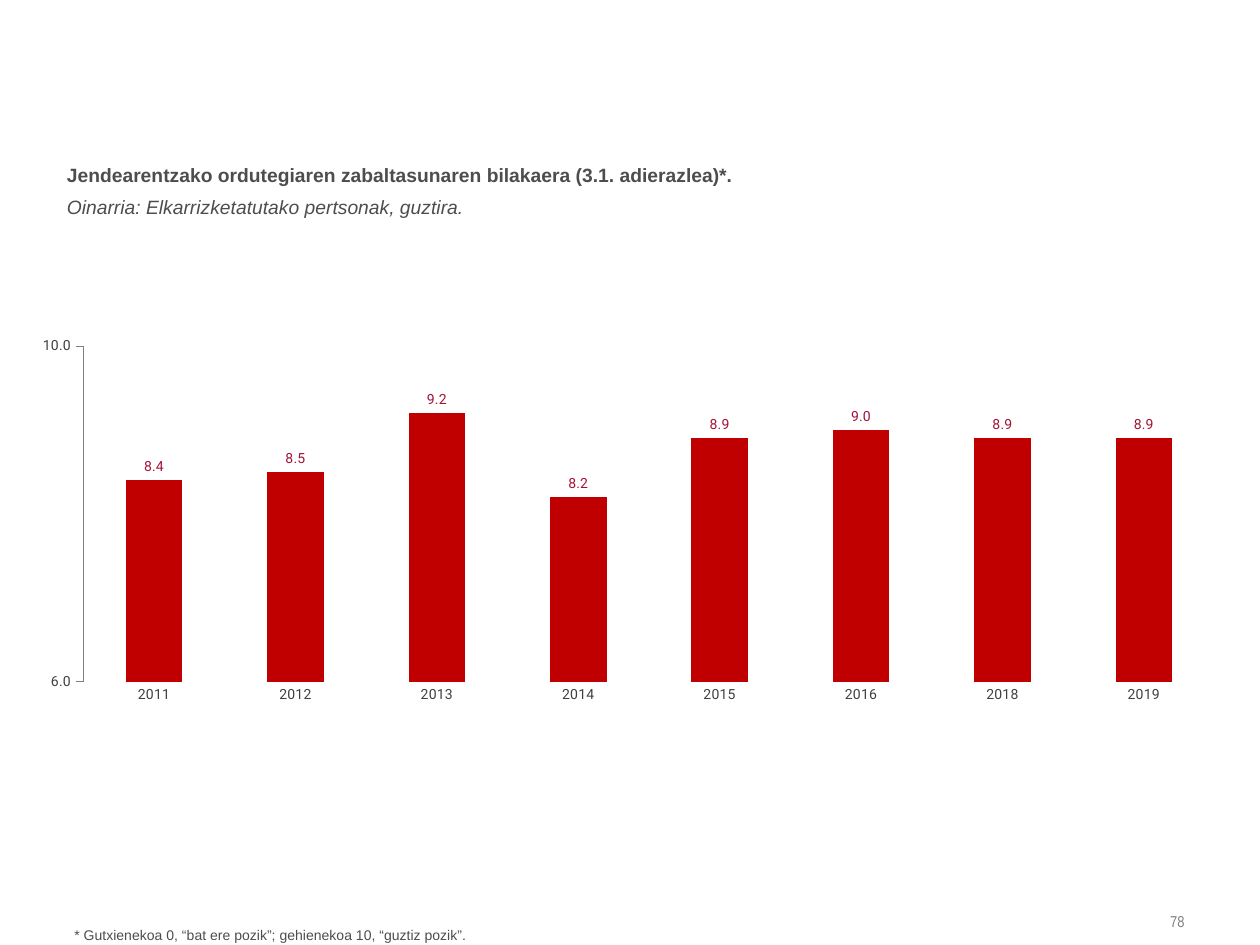
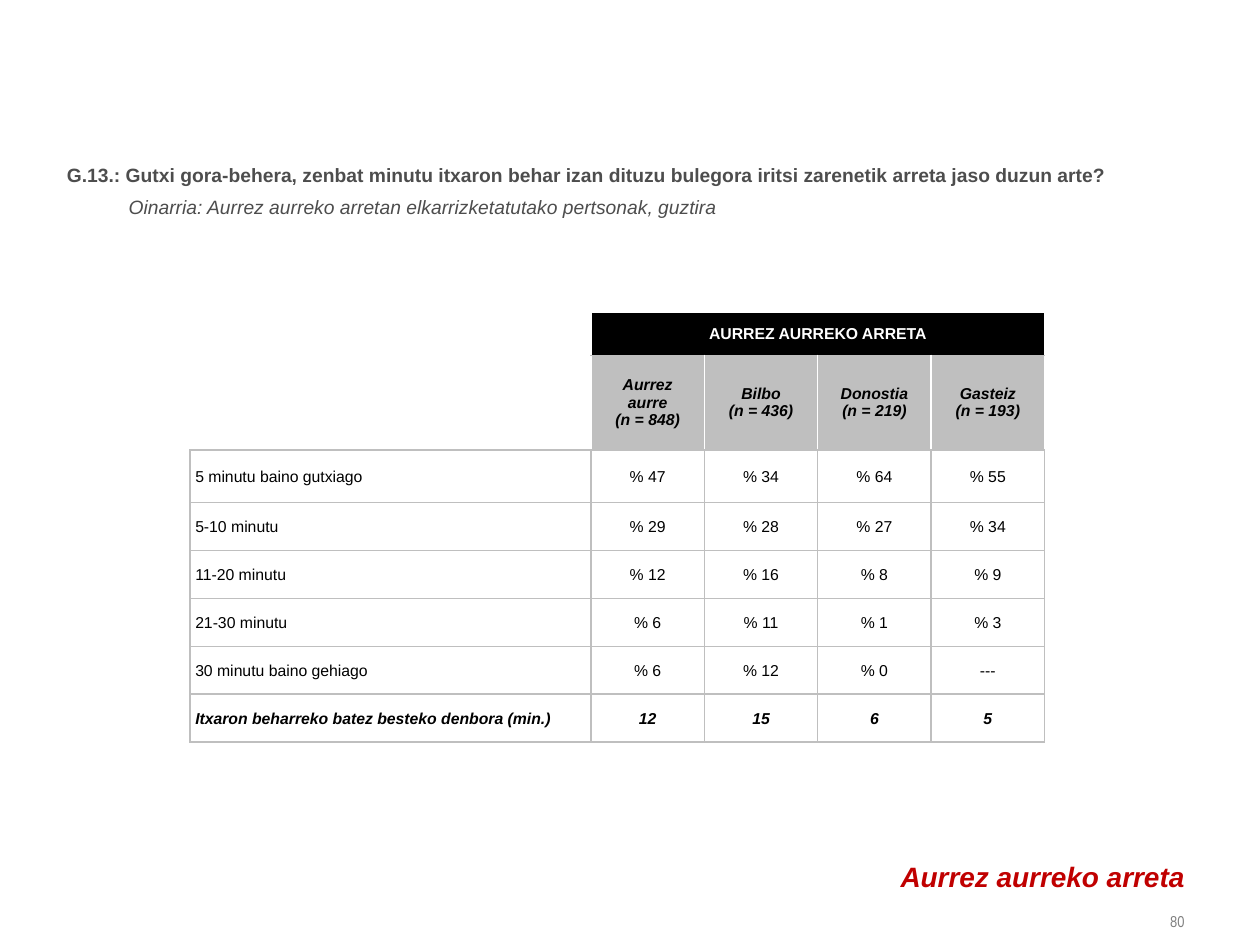
from dataclasses import dataclass, replace

from lxml import etree
from pptx import Presentation
from pptx.chart.data import CategoryChartData
from pptx.dml.color import RGBColor
from pptx.enum.chart import XL_CHART_TYPE, XL_LABEL_POSITION, XL_TICK_MARK
from pptx.enum.text import MSO_ANCHOR, MSO_AUTO_SIZE, PP_ALIGN
from pptx.oxml import parse_xml
from pptx.oxml.ns import nsdecls, qn
from pptx.slide import Slide
from pptx.table import _Cell
from pptx.text.text import TextFrame, _Paragraph
from pptx.util import Emu, Pt

COLUMN_CLUSTERED = XL_CHART_TYPE.COLUMN_CLUSTERED
OUTSIDE_END = XL_LABEL_POSITION.OUTSIDE_END
TICK_OUTSIDE = XL_TICK_MARK.OUTSIDE
TICK_NONE = XL_TICK_MARK.NONE
TOP, MIDDLE = MSO_ANCHOR.TOP, MSO_ANCHOR.MIDDLE
LEFT, CENTER, RIGHT = PP_ALIGN.LEFT, PP_ALIGN.CENTER, PP_ALIGN.RIGHT
NO_AUTOFIT = MSO_AUTO_SIZE.NONE

EMU_PER_PX = 9144
TITLE_ONLY_LAYOUT = 5


@dataclass(frozen=True)
class Theme:
    body_font: str = "Arial"
    number_font: str = "Arial Narrow"
    chart_font: str = "Roboto"
    heading_size: int = 11
    section_size: int = 16
    table_size: int = 9
    number_size: int = 9
    small_size: int = 8
    heading_leading: int = 18
    footnote_leading: int = 20
    text: str = "4D4D4D"
    number: str = "808080"
    accent: str = "C00000"
    chart_text: str = "404040"
    chart_label: str = "A31235"
    axis: str = "808080"
    grid: str = "BFBFBF"
    black: str = "000000"
    white: str = "FFFFFF"


THEME = Theme()


@dataclass(frozen=True)
class Box:
    left: int
    top: int
    width: int
    height: int

    def emu(self) -> tuple[Emu, Emu, Emu, Emu]:
        return px(self.left), px(self.top), px(self.width), px(self.height)


@dataclass(frozen=True)
class Insets:
    left: int = 10
    top: int = 5
    right: int = 10
    bottom: int = 5


@dataclass(frozen=True)
class FontStyle:
    size: int
    color: str
    bold: bool = False
    italic: bool = False
    name: str = THEME.body_font


@dataclass(frozen=True)
class ParagraphStyle:
    align: PP_ALIGN = LEFT
    leading: int | None = None
    margin: int = 0
    indent: int = 0


@dataclass(frozen=True)
class Borders:
    left: str = THEME.grid
    right: str = THEME.grid
    top: str = THEME.grid
    bottom: str = THEME.grid


@dataclass(frozen=True)
class CellStyle:
    font: FontStyle
    fill: str = THEME.white
    align: PP_ALIGN = CENTER
    insets: Insets = Insets()
    borders: Borders = Borders()


HEADING_INSETS = Insets(left=4)
HEADING = FontStyle(THEME.heading_size, THEME.text, bold=True)
BASE_NOTE = FontStyle(THEME.heading_size, THEME.text, italic=True)
FOOTNOTE = FontStyle(THEME.small_size, THEME.text)
SECTION = FontStyle(THEME.section_size, THEME.accent, bold=True, italic=True)
PAGE_NUMBER = FontStyle(THEME.number_size, THEME.number, name=THEME.number_font)
CELL_FONT = FontStyle(THEME.table_size, THEME.black)
AVERAGE_FONT = replace(CELL_FONT, bold=True, italic=True)

PAGE_NUMBER_BOX = Box(870, 717, 80, 28)
FOOTNOTE_BOX = Box(49, 716, 901, 38)
SECTION_BOX = Box(471, 679, 479, 35)
CHART_BOX = Box(34, 268, 930, 294)
PLOT_BOX = Box(32, 6, 898, 267)
TABLE_BOX = Box(151, 248, 678, 340)

SCORES = {"2011": 8.4, "2012": 8.5, "2013": 9.2, "2014": 8.2,
          "2015": 8.9, "2016": 9.0, "2018": 8.9, "2019": 8.9}

COLUMN_WIDTHS = [318] + [90] * 4
ROW_HEIGHTS = [34, 75, 42] + [38] * 5
WAITING_TIMES = [
    ["", "AURREZ AURREKO ARRETA"],
    ["", "Aurrez aurre\n(n = 848)", "Bilbo\n(n = 436)", "Donostia\n(n = 219)", "Gasteiz\n(n = 193)"],
    ["5 minutu baino gutxiago", "% 47", "% 34", "% 64", "% 55"],
    ["5-10 minutu", "% 29", "% 28", "% 27", "% 34"],
    ["11-20 minutu", "% 12", "% 16", "% 8", "% 9"],
    ["21-30 minutu", "% 6", "% 11", "% 1", "% 3"],
    ["30 minutu baino gehiago", "% 6", "% 12", "% 0", "---"],
    ["Itxaron beharreko batez besteko denbora (min.)", "12", "15", "6", "5"],
]

WHITE = THEME.white
CORNER = CellStyle(CELL_FONT, insets=Insets(0, 0, 0, 0), borders=Borders(WHITE, WHITE, WHITE, WHITE))
BANNER = CellStyle(replace(CELL_FONT, color=WHITE, bold=True), fill=THEME.black,
                   borders=Borders(WHITE, WHITE, WHITE))
CITY = CellStyle(AVERAGE_FONT, fill=THEME.grid, borders=Borders(WHITE, WHITE))
VALUE = CellStyle(CELL_FONT, insets=Insets(1, 1, 1, 0))
LABEL = replace(VALUE, align=LEFT, insets=Insets(4, 1, 1, 0))


def px(length: int) -> Emu:
    return Emu(length * EMU_PER_PX)


def rgb(color: str) -> RGBColor:
    return RGBColor.from_string(color)


def format_font(font, style: FontStyle) -> None:
    font.name = style.name
    font.size = Pt(style.size)
    font.bold = style.bold
    font.italic = style.italic
    font.color.rgb = rgb(style.color)


def add_run(paragraph: _Paragraph, text: str, style: FontStyle) -> None:
    run = paragraph.add_run()
    run.text = text
    format_font(run.font, style)


def format_paragraph(paragraph: _Paragraph, style: ParagraphStyle) -> None:
    properties = paragraph._p.get_or_add_pPr()
    properties.set("marL", str(px(style.margin)))
    properties.set("indent", str(px(style.indent)))
    paragraph.alignment = style.align
    if style.leading:
        paragraph.line_spacing = Pt(style.leading)


def set_margins(target: TextFrame | _Cell, insets: Insets) -> None:
    target.margin_left = px(insets.left)
    target.margin_top = px(insets.top)
    target.margin_right = px(insets.right)
    target.margin_bottom = px(insets.bottom)


def format_frame(frame: TextFrame, insets: Insets, anchor: MSO_ANCHOR) -> None:
    frame.word_wrap = True
    frame.auto_size = NO_AUTOFIT
    frame.vertical_anchor = anchor
    set_margins(frame, insets)


def add_text(slide: Slide, box: Box, text: str, font: FontStyle, style: ParagraphStyle,
             insets: Insets = HEADING_INSETS, anchor: MSO_ANCHOR = TOP) -> None:
    frame = slide.shapes.add_textbox(*box.emu()).text_frame
    format_frame(frame, insets, anchor)
    format_paragraph(frame.paragraphs[0], style)
    add_run(frame.paragraphs[0], text, font)


def add_survey_slide(presentation, heading: str, base_note: str, number: str,
                     height: int, hanging: int = 0) -> Slide:
    slide = presentation.slides.add_slide(presentation.slide_layouts[TITLE_ONLY_LAYOUT])
    title = slide.shapes.title
    title.left, title.top, title.width, title.height = Box(49, 118, 901, height).emu()
    format_frame(title.text_frame, HEADING_INSETS, TOP)
    paragraph = title.text_frame.paragraphs[0]
    format_paragraph(paragraph, ParagraphStyle(LEFT, THEME.heading_leading, hanging, -hanging))
    add_run(paragraph, heading, HEADING)
    paragraph.add_line_break()
    add_run(paragraph, base_note, BASE_NOTE)
    add_text(slide, PAGE_NUMBER_BOX, number, PAGE_NUMBER, ParagraphStyle(RIGHT), Insets(), MIDDLE)
    return slide


def set_plot_layout(chart, frame: Box, plot: Box) -> None:
    plot_area = chart._chartSpace.chart.plotArea
    for existing in plot_area.findall(qn("c:layout")):
        plot_area.remove(existing)
    layout = parse_xml(f"<c:layout {nsdecls('c')}><c:manualLayout/></c:layout>")
    settings = {
        "layoutTarget": "inner", "xMode": "edge", "yMode": "edge",
        "x": plot.left / frame.width, "y": plot.top / frame.height,
        "w": plot.width / frame.width, "h": plot.height / frame.height,
    }
    for name, value in settings.items():
        etree.SubElement(layout[0], qn(f"c:{name}")).set("val", str(value))
    plot_area.insert(0, layout)


def add_score_chart(slide: Slide) -> None:
    data = CategoryChartData(number_format="0.0")
    data.categories = list(SCORES)
    data.add_series("Series 1", list(SCORES.values()))
    chart = slide.shapes.add_chart(COLUMN_CLUSTERED, *CHART_BOX.emu(), data).chart
    chart.has_legend = False
    chart.has_title = False
    axis_font = FontStyle(THEME.small_size, THEME.chart_text, name=THEME.chart_font)
    format_font(chart.font, axis_font)

    value_axis, category_axis = chart.value_axis, chart.category_axis
    value_axis.minimum_scale, value_axis.maximum_scale, value_axis.major_unit = 6, 10, 4
    value_axis.has_major_gridlines = False
    value_axis.major_tick_mark = TICK_OUTSIDE
    value_axis.format.line.color.rgb = rgb(THEME.axis)
    value_axis.format.line.width = Pt(0.75)
    value_axis.tick_labels.number_format = "#,##0.0"
    value_axis.tick_labels.number_format_is_linked = False
    category_axis.major_tick_mark = TICK_NONE
    category_axis.format.line.fill.background()

    plot = chart.plots[0]
    plot.gap_width = 150
    plot.vary_by_categories = False
    plot.series[0].format.fill.solid()
    plot.series[0].format.fill.fore_color.rgb = rgb(THEME.accent)
    plot.has_data_labels = True
    labels = plot.data_labels
    labels.show_value = True
    labels.position = OUTSIDE_END
    labels.number_format = "0.0"
    labels.number_format_is_linked = False
    format_font(labels.font, replace(axis_font, color=THEME.chart_label))
    set_plot_layout(chart, CHART_BOX, PLOT_BOX)


def format_cell(cell: _Cell, style: CellStyle) -> None:
    properties = cell._tc.get_or_add_tcPr()
    borders = style.borders
    sides = {"L": borders.left, "R": borders.right, "T": borders.top, "B": borders.bottom}
    for side, color in sides.items():
        properties.append(parse_xml(
            f'<a:ln{side} {nsdecls("a")} w="{Pt(1)}"><a:solidFill>'
            f'<a:srgbClr val="{color}"/></a:solidFill></a:ln{side}>'))
    cell.fill.solid()
    cell.fill.fore_color.rgb = rgb(style.fill)
    cell.vertical_anchor = MIDDLE
    set_margins(cell, style.insets)


def cell_style(row: int, column: int) -> CellStyle:
    if row < 2:
        return CORNER if column == 0 else (BANNER, CITY)[row]
    style = LABEL if column == 0 else VALUE
    return replace(style, font=AVERAGE_FONT) if row == len(ROW_HEIGHTS) - 1 else style


def add_waiting_table(slide: Slide) -> None:
    table = slide.shapes.add_table(len(ROW_HEIGHTS), len(COLUMN_WIDTHS), *TABLE_BOX.emu()).table
    table.first_row = False
    table.horz_banding = False
    for column, width in zip(table.columns, COLUMN_WIDTHS):
        column.width = px(width)
    for row, height in zip(table.rows, ROW_HEIGHTS):
        row.height = px(height)
    table.cell(0, 1).merge(table.cell(0, len(COLUMN_WIDTHS) - 1))
    for row in range(len(ROW_HEIGHTS)):
        for column in range(len(COLUMN_WIDTHS)):
            format_cell(table.cell(row, column), cell_style(row, column))
    for row, texts in enumerate(WAITING_TIMES):
        for column, text in enumerate(texts):
            style = cell_style(row, column)
            frame = table.cell(row, column).text_frame
            for index, line in enumerate(text.splitlines()):
                paragraph = frame.add_paragraph() if index else frame.paragraphs[0]
                paragraph.alignment = style.align
                add_run(paragraph, line, style.font)


def main() -> None:
    presentation = Presentation()
    presentation.slide_width, presentation.slide_height = px(1000), px(750)

    schedule = add_survey_slide(
        presentation, "Jendearentzako ordutegiaren zabaltasunaren bilakaera (3.1. adierazlea)*.",
        "Oinarria: Elkarrizketatutako pertsonak, guztira.", "78", height=61)
    add_text(schedule, FOOTNOTE_BOX, "* Gutxienekoa 0, “bat ere pozik”; gehienekoa 10, “guztiz pozik”.",
             FOOTNOTE, ParagraphStyle(leading=THEME.footnote_leading, margin=6))
    add_score_chart(schedule)

    waiting = add_survey_slide(
        presentation,
        "G.13.: Gutxi gora-behera, zenbat minutu itxaron behar izan dituzu bulegora iritsi zarenetik "
        "arreta jaso duzun arte?",
        "Oinarria: Aurrez aurreko arretan elkarrizketatutako pertsonak, guztira", "80",
        height=86, hanging=49)
    add_waiting_table(waiting)
    add_text(waiting, SECTION_BOX, "Aurrez aurreko arreta", SECTION,
             ParagraphStyle(RIGHT, THEME.heading_leading, 49, -49))

    presentation.save("out.pptx")


if __name__ == "__main__":
    main()
